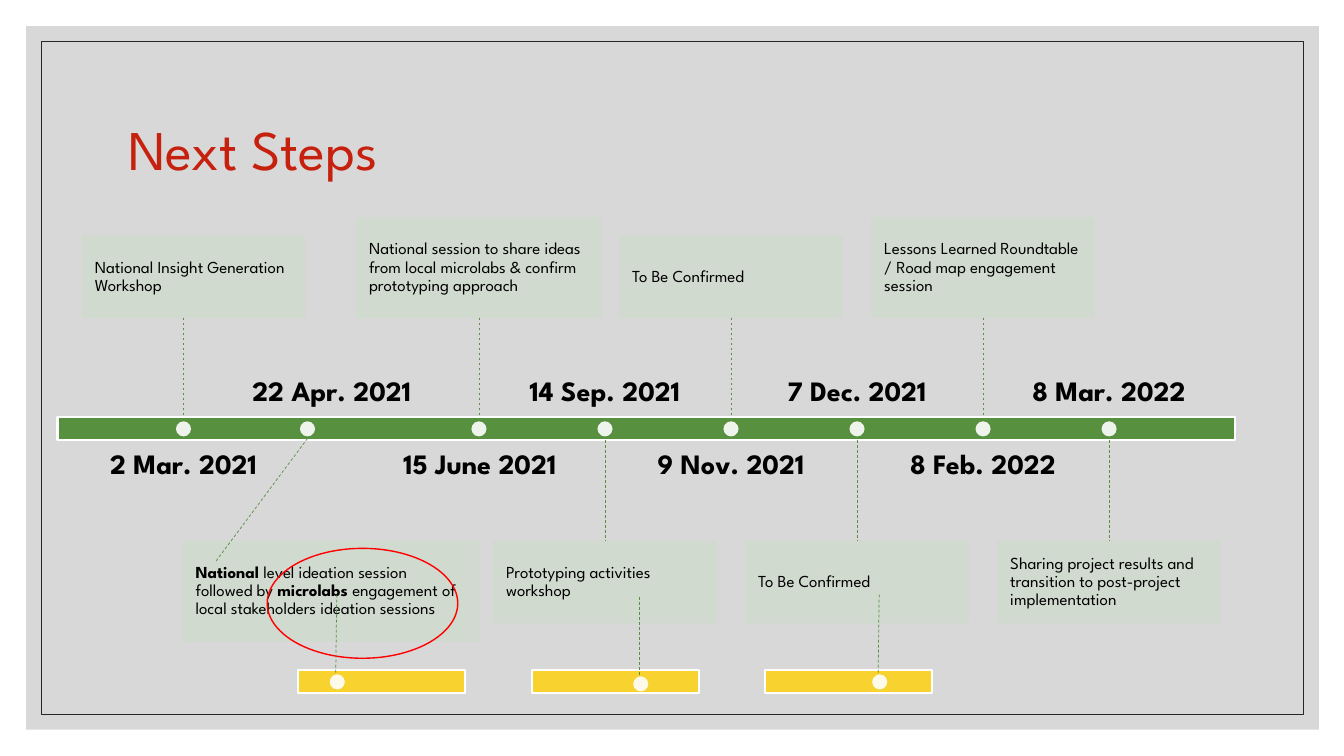
from lxml import etree
from pptx import Presentation
from pptx.dml.color import RGBColor
from pptx.enum.dml import MSO_LINE
from pptx.enum.shapes import MSO_CONNECTOR, MSO_SHAPE
from pptx.enum.text import MSO_ANCHOR, PP_ALIGN
from pptx.oxml.ns import qn
from pptx.util import Inches, Pt

FONT = "League Spartan"
GREEN, YELLOW, PALE, WHITE = "57903F", "F8D22F", "D1DBCF", "FFFFFF"

prs = Presentation()
prs.slide_width, prs.slide_height = Inches(13.33), Inches(7.5)
slide = prs.slides.add_slide(prs.slide_layouts[5])
shapes = slide.shapes


def add_block(kind, left, top, width, height, fill=None, line=None, weight=1, opacity=100):
    """Add a shape; no fill or line colour means none is drawn, opacity is in percent."""
    block = shapes.add_shape(kind, Inches(left), Inches(top), Inches(width), Inches(height))
    block.shadow.inherit = False
    for paint, colour in ((block.fill, fill), (block.line.fill, line)):
        if colour is None:
            paint.background()
        else:
            paint.solid()
            paint.fore_color.rgb = RGBColor.from_string(colour)
    if line:
        block.line.width = Pt(weight)
    if opacity < 100:
        for tint in block._element.spPr.iter(qn("a:srgbClr")):
            etree.SubElement(tint, qn("a:alpha")).set("val", str(opacity * 1000))
    return block


def add_dashed_line(x1, y1, x2, y2):
    link = shapes.add_connector(
        MSO_CONNECTOR.STRAIGHT, Inches(x1), Inches(y1), Inches(x2), Inches(y2))
    link.line.color.rgb = RGBColor.from_string(GREEN)
    link.line.width = Pt(0.5)
    link.line.dash_style = MSO_LINE.DASH
    etree.SubElement(link._element.spPr, qn("a:effectLst"))
    return link


# Backdrop and frame, with the title in front of them
add_block(MSO_SHAPE.RECTANGLE, 0.26, 0.26, 12.82, 6.98, fill="BFBFBF", opacity=60)
add_block(MSO_SHAPE.RECTANGLE, 0.41, 0.41, 12.52, 6.68, line="262626", weight=0.5)

title = shapes.title
shapes._spTree.append(title._element)
title.left, title.top, title.width, title.height = (
    Inches(1.17), Inches(0.7), Inches(11), Inches(1.5))
title.text_frame.text = "Next Steps"
title.text_frame.vertical_anchor = MSO_ANCHOR.MIDDLE
heading = title.text_frame.paragraphs[0]
heading.alignment = PP_ALIGN.LEFT
heading.line_spacing = 1.07
heading.runs[0].font.name = FONT
heading.runs[0].font.size = Pt(40)
heading.runs[0].font.color.rgb = RGBColor.from_string("C6210E")

# Timeline: steps alternate between a box above the bar and a box below it
BAR_TOP, BAR_HEIGHT, DOT = 4.14, 0.23, 0.15
BAR_BOTTOM = BAR_TOP + BAR_HEIGHT
UPPER_BOX_BOTTOM, LOWER_BOX_TOP = 3.15, 5.37
add_block(MSO_SHAPE.RECTANGLE, 0.57, BAR_TOP, 11.68, BAR_HEIGHT, GREEN, WHITE, 1.5)

# date, dot centre, date centre, box left, box width, box height, text (** marks bold)
steps = [
    ("2 Mar. 2021", 1.82, 1.82, 0.82, 2.2, 0.81, "National Insight Generation Workshop"),
    ("22 Apr. 2021", 3.05, 3.29, 1.82, 2.93, 0.99,
     "**National** level ideation session followed by **microlabs **"
     "engagement of local stakeholders ideation sessions"),
    ("15 June 2021", 4.75, 4.76, 3.54, 2.42, 0.99,
     "National session to share ideas from local microlabs & confirm prototyping approach"),
    ("14 Sep. 2021", 6, 6, 4.9, 2.2, 0.81, "Prototyping activities workshop"),
    ("9 Nov. 2021", 7.25, 7.25, 6.15, 2.2, 0.81, "To Be Confirmed"),
    ("7 Dec. 2021", 8.5, 8.5, 7.4, 2.2, 0.81, "To Be Confirmed"),
    ("8 Feb. 2022", 9.75, 9.75, 8.65, 2.2, 0.99,
     "Lessons Learned Roundtable / Road map engagement session"),
    ("8 Mar. 2022", 11, 11, 9.9, 2.2, 0.81,
     "Sharing project results and transition to post-project implementation"),
]
for index, (date, dot_x, date_x, left, width, height, text) in enumerate(steps):
    above = index % 2 == 0
    box_top = UPPER_BOX_BOTTOM - height if above else LOWER_BOX_TOP
    box = add_block(MSO_SHAPE.RECTANGLE, left, box_top, width, height, PALE, PALE, opacity=90)
    label = shapes.add_textbox(
        Inches(date_x - 1), Inches(4.47 if above else 3.38), Inches(2), Inches(0.66))
    label_anchor = MSO_ANCHOR.TOP if above else MSO_ANCHOR.BOTTOM

    for holder, wording, size, inset, anchor, alignment in (
        (label, f"**{date}**", 20, 0, label_anchor, PP_ALIGN.CENTER),
        (box, text, 12, 0.12, MSO_ANCHOR.MIDDLE, PP_ALIGN.LEFT),
    ):
        frame = holder.text_frame
        frame.word_wrap = True
        frame.vertical_anchor = anchor
        frame.margin_left = frame.margin_right = Inches(inset)
        frame.margin_top = frame.margin_bottom = Inches(inset)
        paragraph = frame.paragraphs[0]
        paragraph.alignment = alignment
        paragraph.line_spacing = 0.9
        for position, piece in enumerate(wording.split("**")):
            if piece:
                run = paragraph.add_run()
                run.text = piece
                run.font.name = FONT
                run.font.size = Pt(size)
                run.font.bold = position % 2 == 1
                run.font.color.rgb = RGBColor.from_string("000000")

    if date == "22 Apr. 2021":
        add_dashed_line(dot_x, 4.35, 2.14, 5.57)
    elif above:
        link = add_dashed_line(dot_x, UPPER_BOX_BOTTOM, dot_x, BAR_TOP)
        if abs(left + width / 2 - dot_x) < 0.01:
            link.begin_connect(box, 2)
    else:
        link = add_dashed_line(dot_x, BAR_BOTTOM, dot_x, LOWER_BOX_TOP)
        link.end_connect(box, 0)
    add_block(MSO_SHAPE.OVAL, dot_x - DOT / 2, 4.18, DOT, DOT, WHITE, opacity=90)

# Highlight and the follow-up bars
add_block(MSO_SHAPE.OVAL, 2.65, 5.44, 1.89, 1.09, line="FF0000")

# bar left, dot left, dot top, line start x, line end x
follow_ups = [
    (2.96, 3.27, 6.69, 3.34, 3.33),
    (5.28, 6.28, 6.71, 6.34, 6.34),
    (7.59, 8.65, 6.69, 8.72, 8.71),
]
for bar_left, dot_left, dot_top, start_x, end_x in follow_ups:
    add_block(MSO_SHAPE.RECTANGLE, bar_left, 6.65, 1.65, BAR_HEIGHT, YELLOW, WHITE, 1.5)
    add_block(MSO_SHAPE.OVAL, dot_left, dot_top, DOT, DOT, WHITE, opacity=90)
    add_dashed_line(start_x, dot_top - 0.79, end_x, dot_top)

prs.save("out.pptx")
